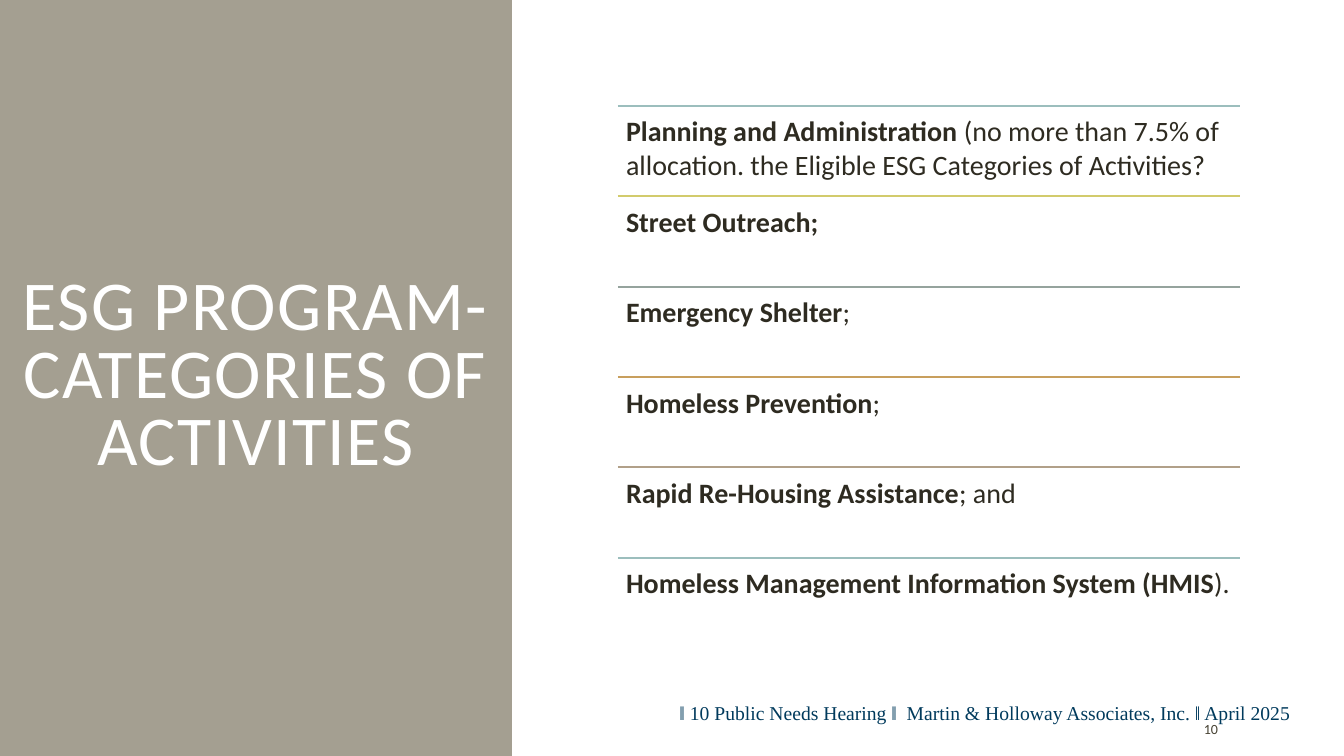
from lxml.etree import SubElement
from pptx import Presentation
from pptx.dml.color import RGBColor
from pptx.enum.shapes import MSO_CONNECTOR
from pptx.enum.text import MSO_ANCHOR, MSO_AUTO_SIZE, PP_ALIGN
from pptx.oxml.ns import qn
from pptx.util import Pt

# Content
TITLE = "ESG PROGRAM- CATEGORIES OF ACTIVITIES"
FOOTER = "‖ 10 Public Needs Hearing ‖  Martin & Holloway Associates, Inc. ‖ April 2025"
PAGE_NUMBER = "10"
ACTIVITIES = [  # bold part, regular part, rule colour
    ("Planning and Administration ",
     "(no more than 7.5% of allocation. the Eligible ESG Categories of Activities?", "aqua"),
    ("Street Outreach;", "", "lime"),
    ("Emergency Shelter", ";", "sage"),
    ("Homeless Prevention", ";", "ochre"),
    ("Rapid Re-Housing Assistance", "; and", "tan"),
    ("Homeless Management Information System (HMIS", ").", "aqua"),
]
COLORS = {
    "panel": "A49F91", "white": "FFFFFF", "body": "2E2B21", "number": "474233",
    "footer": "003A5C", "aqua": "9CBEBD", "lime": "D2CB6C", "sage": "95A39D",
    "ochre": "C89F5D", "tan": "B1A089",
}

# Layout in px
PAGE_WIDTH, PAGE_HEIGHT = 1344, 756
PANEL_WIDTH = 512
LIST_LEFT, LIST_TOP, LIST_WIDTH, LIST_HEIGHT = 618, 106, 622, 542
ROW_INSET = 8


def px(length):
    return round(length * 914400 / 100.8)


def color(name):
    return RGBColor.from_string(COLORS[name])


def style(para, font_name, size, color_name):
    para.font.name = font_name
    para.font.size = Pt(size)
    para.font.color.rgb = color(color_name)


def add_text_box(page, left, top, width, height, anchor):
    box = page.shapes.add_textbox(px(left), px(top), px(width), px(height))
    frame = box.text_frame
    frame.word_wrap = True
    frame.vertical_anchor = anchor
    return frame


def add_title(page):
    title = page.shapes.title
    title.left, title.top = 0, 0
    title.width, title.height = px(PANEL_WIDTH), px(PAGE_HEIGHT)
    title.fill.solid()
    title.fill.fore_color.rgb = color("panel")
    frame = title.text_frame
    frame.text = TITLE
    frame.word_wrap = True
    frame.auto_size = MSO_AUTO_SIZE.NONE
    frame.vertical_anchor = MSO_ANCHOR.MIDDLE
    para = frame.paragraphs[0]
    para.alignment = PP_ALIGN.CENTER
    para.line_spacing = 0.8
    style(para, "Calibri", 50, "white")
    para.runs[0].font._element.set("spc", "100")


def add_activity(page, top, height, bold_text, regular_text, rule_color):
    rule = page.shapes.add_connector(
        MSO_CONNECTOR.STRAIGHT, px(LIST_LEFT), px(top), px(LIST_LEFT + LIST_WIDTH), px(top))
    rule.line.color.rgb = color(rule_color)
    rule.line.width = Pt(1.25)
    SubElement(rule._element.spPr, qn("a:effectLst"))

    frame = add_text_box(page, LIST_LEFT, top, LIST_WIDTH, height, MSO_ANCHOR.TOP)
    frame.margin_left = frame.margin_right = px(ROW_INSET)
    frame.margin_top = frame.margin_bottom = px(ROW_INSET)
    para = frame.paragraphs[0]
    style(para, "Calibri", 20, "body")
    for text, bold in ((bold_text, True), (regular_text, False)):
        if text:
            span = para.add_run()
            span.text = text
            span.font.bold = bold


def main():
    deck = Presentation()
    deck.slide_width, deck.slide_height = px(PAGE_WIDTH), px(PAGE_HEIGHT)
    page = deck.slides.add_slide(deck.slide_layouts[5])
    add_title(page)

    # Ruled list of activities
    row_height = LIST_HEIGHT / len(ACTIVITIES)
    for index, activity in enumerate(ACTIVITIES):
        add_activity(page, LIST_TOP + index * row_height, row_height, *activity)

    # Footer and page number
    number = add_text_box(page, 1194, 714, 107, 30, MSO_ANCHOR.MIDDLE)
    number.text = PAGE_NUMBER
    number.paragraphs[0].space_after = Pt(6)
    style(number.paragraphs[0], "Calibri", 10, "number")

    footer = add_text_box(page, 246, 693, 1055, 40, MSO_ANCHOR.MIDDLE)
    footer.text = FOOTER
    footer.paragraphs[0].alignment = PP_ALIGN.RIGHT
    style(footer.paragraphs[0], "Times New Roman", 14, "footer")

    deck.save("out.pptx")


if __name__ == "__main__":
    main()
